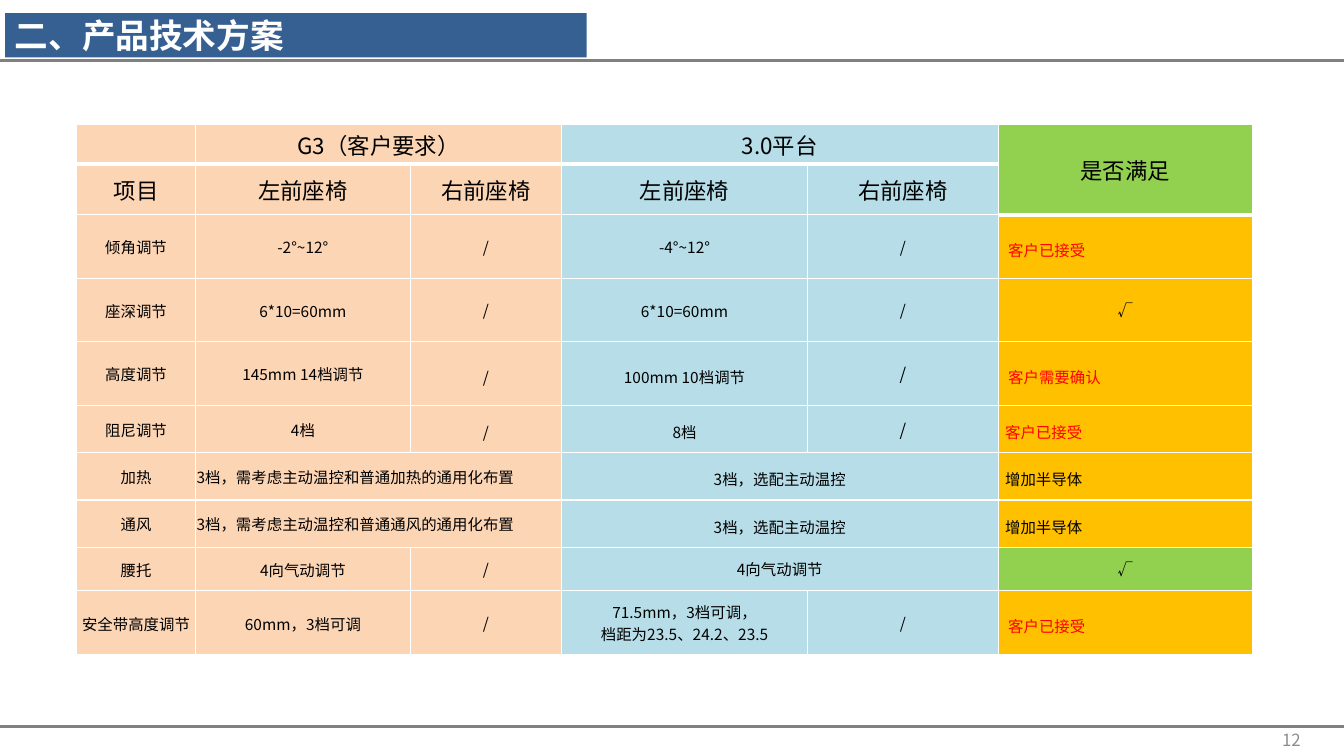
"""Build the seat specification comparison slide."""
import pptx
import pptx.dml.color
import pptx.enum.shapes
import pptx.enum.text
import pptx.oxml.ns
import pptx.util
from lxml import etree
from pptx.util import Inches

COLORS = {
    "peach": "FCD5B5", "sky": "B7DEE8", "green": "92D050", "amber": "FFC000",
    "navy": "376092", "rule": "808080", "number": "8C8C8C",
    "black": "000000", "white": "FFFFFF", "red": "FF0000",
}
COLUMN_WIDTHS = [1.18, 2.13, 1.5, 2.44, 1.89, 2.52]
ROW_HEIGHTS = [0.37, 0.5, 0.63, 0.63, 0.63, 0.47, 0.47, 0.47, 0.43, 0.64]
COLUMN_FILLS = ["peach"] * 3 + ["sky"] * 2 + ["amber"]
GREEN_CELLS = [(0, 5), (8, 5)]
MERGES = [((0, 1), (0, 2)), ((0, 3), (0, 4)), ((0, 5), (1, 5)),
          ((6, 1), (6, 2)), ((6, 3), (6, 4)),
          ((7, 1), (7, 2)), ((7, 3), (7, 4)), ((8, 3), (8, 4))]
INSETS = {"tight": (0.01, 0.01, 0.01, 0), "narrow": (0.07, 0, 0.07, 0)}

SLASH = ("/", "")
CHECK = ("√", "")
ACCEPTED = ("客户已接受", "spaced left red")
SEMICONDUCTOR = ("增加半导体", "narrow spaced left")
ACTIVE_CONTROL = ("3档，选配主动温控", "narrow spaced")

SPECIFICATIONS = [
    [None, ("G3（客户要求）", "header"), None, ("3.0平台", "header"), None,
     ("是否满足", "header")],
    [(name, "header") for name in
     ("项目", "左前座椅", "右前座椅", "左前座椅", "右前座椅")] + [None],
    [("倾角调节", "tight"), ("-2°~12°", "tight"), SLASH,
     ("-4°~12°", "tight"), SLASH, ACCEPTED],
    [("座深调节", "tight"), ("6*10=60mm", "tight"), SLASH,
     ("6*10=60mm", "tight"), SLASH, CHECK],
    [("高度调节", "tight"), ("145mm 14档调节", "tight"), ("/", "spaced"),
     ("100mm 10档调节", "narrow spaced"), ("/", "large"),
     ("客户需要确认", "spaced left red")],
    [("阻尼调节", "tight"), ("4档", "tight"), ("/", "narrow spaced"),
     ("8档", "narrow spaced"), ("/", "narrow large"),
     ("客户已接受", "narrow spaced left red")],
    [("加热", "tight"), ("3档，需考虑主动温控和普通加热的通用化布置", "tight left"),
     None, ACTIVE_CONTROL, None, SEMICONDUCTOR],
    [("通风", "tight"), ("3档，需考虑主动温控和普通通风的通用化布置", "tight left"),
     None, ACTIVE_CONTROL, None, SEMICONDUCTOR],
    [("腰托", "tight"), ("4向气动调节", "tight"), SLASH,
     ("4向气动调节", ""), None, CHECK],
    [("安全带高度调节", "tight"), ("60mm，3档可调", "tight"), SLASH,
     ("71.5mm，3档可调，\n档距为23.5、24.2、23.5", ""), SLASH, ACCEPTED],
]


class SlideBuilder:
    """Draw styled elements on one slide."""

    font = "Noto Sans CJK SC"
    align = pptx.enum.text.PP_ALIGN
    middle = pptx.enum.text.MSO_ANCHOR.MIDDLE

    def __init__(self, slide):
        self.slide = slide

    def color(self, name):
        return pptx.dml.color.RGBColor.from_string(COLORS[name])

    def set_text(self, frame, text, size, color, align, bold=False, spacing=None):
        frame.text = text
        for paragraph in frame.paragraphs:
            paragraph.alignment = align
            if spacing:
                paragraph.line_spacing = pptx.util.Pt(spacing)
            for run in paragraph.runs:
                run.font.name = self.font
                run.font.size = pptx.util.Pt(size)
                run.font.bold = bold
                run.font.color.rgb = self.color(color)
                latin = run.font._element.find(pptx.oxml.ns.qn("a:latin"))
                east_asian = etree.Element(pptx.oxml.ns.qn("a:ea"), typeface=self.font)
                latin.addnext(east_asian)

    def rule(self, top):
        line = self.slide.shapes.add_connector(
            pptx.enum.shapes.MSO_CONNECTOR.STRAIGHT,
            0, Inches(top), Inches(13.33), Inches(top))
        line.line.color.rgb = self.color("rule")
        line.line.width = pptx.util.Pt(2)
        etree.SubElement(line._element.spPr, pptx.oxml.ns.qn("a:effectLst"))

    def page_number(self, text, left, top, width, height):
        box = self.slide.shapes.add_textbox(*map(Inches, (left, top, width, height)))
        frame = box.text_frame
        frame.word_wrap = True
        frame.vertical_anchor = self.middle
        self.set_text(frame, text, 12, "number", self.align.RIGHT)

    def title(self, text, left, top, width, height):
        banner = self.slide.shapes.add_shape(
            pptx.enum.shapes.MSO_SHAPE.RECTANGLE,
            *map(Inches, (left, top, width, height)))
        banner.shadow.inherit = False
        banner.fill.solid()
        banner.fill.fore_color.rgb = self.color("navy")
        banner.line.fill.background()
        banner.text_frame.word_wrap = False
        banner.text_frame.vertical_anchor = self.middle
        self.set_text(banner.text_frame, text, 24, "white", self.align.LEFT, bold=True)

    def border(self, cell, side, width):
        properties = cell._tc.get_or_add_tcPr()
        line = etree.SubElement(properties, pptx.oxml.ns.qn(f"a:ln{side}"),
                                w=str(pptx.util.Pt(width)))
        fill = etree.SubElement(line, pptx.oxml.ns.qn("a:solidFill"))
        etree.SubElement(fill, pptx.oxml.ns.qn("a:srgbClr"), val=COLORS["white"])

    def cell(self, cell, content, fill, bottom_width):
        for side, width in (("L", 1), ("R", 1), ("T", 1), ("B", bottom_width)):
            self.border(cell, side, width)
        cell.fill.solid()
        cell.fill.fore_color.rgb = self.color(fill)
        cell.vertical_anchor = self.middle
        if content is None:
            return
        text, style = content
        traits = style.split()
        for name, (left, top, right, bottom) in INSETS.items():
            if name in traits:
                cell.margin_left, cell.margin_top = Inches(left), Inches(top)
                cell.margin_right, cell.margin_bottom = Inches(right), Inches(bottom)
        size = 16 if "header" in traits else 12 if "large" in traits else 11
        self.set_text(cell.text_frame, text, size,
                      "red" if "red" in traits else "black",
                      self.align.LEFT if "left" in traits else self.align.CENTER,
                      spacing=20 if "spaced" in traits else None)

    def table(self, rows, left, top):
        frame = self.slide.shapes.add_table(
            len(ROW_HEIGHTS), len(COLUMN_WIDTHS), Inches(left), Inches(top),
            Inches(sum(COLUMN_WIDTHS)), Inches(sum(ROW_HEIGHTS)))
        table = frame.table
        table.first_row = table.horz_banding = False
        for column, width in zip(table.columns, COLUMN_WIDTHS):
            column.width = Inches(width)
        for row, height in zip(table.rows, ROW_HEIGHTS):
            row.height = Inches(height)
        for start, end in MERGES:
            table.cell(*start).merge(table.cell(*end))
        for r, contents in enumerate(rows):
            for c, content in enumerate(contents):
                fill = "green" if (r, c) in GREEN_CELLS else COLUMN_FILLS[c]
                bottom_width = 3 if r == 0 or (r, c) == (1, 5) else 1
                self.cell(table.cell(r, c), content, fill, bottom_width)


def main():
    presentation = pptx.Presentation()
    presentation.slide_width = Inches(13.33)
    presentation.slide_height = Inches(7.5)
    builder = SlideBuilder(presentation.slides.add_slide(presentation.slide_layouts[6]))
    for top in (0.6, 7.21):
        builder.rule(top)
    builder.page_number("12", 9.89, 7.14, 3.11, 0.4)
    builder.table(SPECIFICATIONS, 0.76, 1.23)
    builder.title("二、产品技术方案", 0.05, 0.13, 5.77, 0.44)
    presentation.save("out.pptx")


if __name__ == "__main__":
    main()
